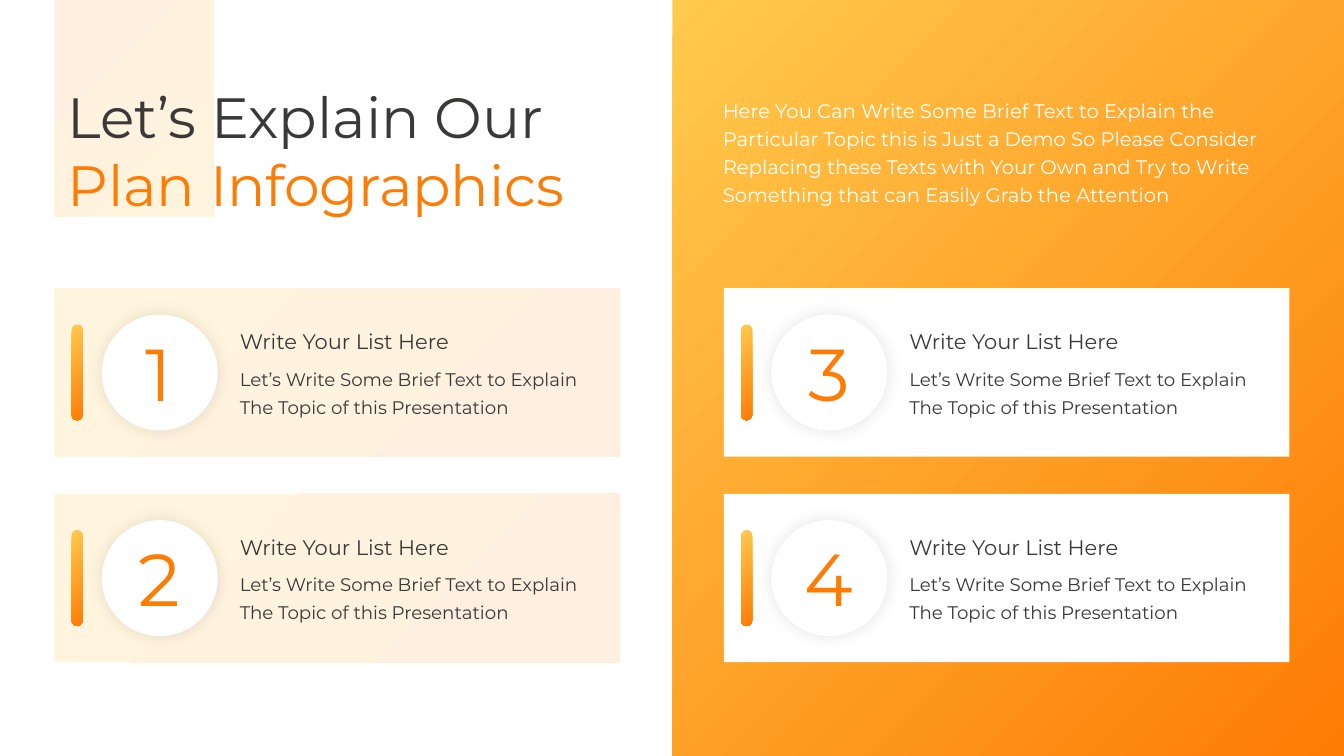
from lxml import etree
from pptx import Presentation
from pptx import util as u
from pptx.dml.color import RGBColor
from pptx.enum import shapes, text
from pptx.oxml import ns

COLORS = {
    "white": "FFFFFF",
    "dark": "3B3838",
    "orange": "FE7C04",
    "yellow": "FFCA4E",
    "peach": "FFEFE1",
    "cream": "FFF4DD",
}


def add_block(parent, kind, left, top, width, height, first, last):
    shape = parent.shapes.add_shape(
        kind, u.Inches(left), u.Inches(top), u.Inches(width), u.Inches(height))
    shape.shadow.inherit = False
    shape.line.fill.background()
    if first == last:
        shape.fill.solid()
        shape.fill.fore_color.rgb = RGBColor.from_string(COLORS[first])
    else:
        shape.fill.gradient()
        shape.fill.gradient_angle = 315
        for stop, color in zip(shape.fill.gradient_stops, (first, last)):
            stop.color.rgb = RGBColor.from_string(COLORS[color])
    return shape


def add_lines(parent, left, top, width, height, lines, size, colors, wrap=False):
    box = parent.shapes.add_textbox(
        u.Inches(left), u.Inches(top), u.Inches(width), u.Inches(height))
    frame = box.text_frame
    frame.text = "\n".join(lines)
    frame.word_wrap = wrap
    frame.auto_size = text.MSO_AUTO_SIZE.SHAPE_TO_FIT_TEXT
    for paragraph, color in zip(frame.paragraphs, colors):
        font = paragraph.runs[0].font
        font.name = "Montserrat"
        font.size = u.Pt(size)
        font.color.rgb = RGBColor.from_string(COLORS[color])
    return frame.paragraphs


presentation = Presentation()
presentation.slide_width = u.Inches(13.33)
presentation.slide_height = u.Inches(7.5)
slide = presentation.slides.add_slide(presentation.slide_layouts[6])

RECTANGLE = shapes.MSO_SHAPE.RECTANGLE
add_block(slide, RECTANGLE, 0.54, 0, 1.58, 2.15, "peach", "cream")
add_block(slide, RECTANGLE, 6.67, 0, 6.66, 7.5, "yellow", "orange")

add_lines(slide, 0.57, 0.76, 5.54, 1.46,
          ["Let’s Explain Our", "Plan Infographics"], 40.5, ["dark", "orange"])
introduction = [
    "Here You Can Write Some Brief Text to Explain the",
    "Particular Topic this is Just a Demo So Please Consider",
    "Replacing these Texts with Your Own and Try to Write",
    "Something that can Easily Grab the Attention",
]
for paragraph in add_lines(slide, 7.07, 0.89, 5.62, 1.2, introduction, 14,
                           ["white"] * 4, wrap=True):
    paragraph.line_spacing = u.Pt(20)

columns = [(0.54, "cream", "peach"), (7.18, "white", "white")]
rows = [2.86, 4.9]
number_widths = [0.5, 0.64, 0.65, 0.72]

for index, number_width in enumerate(number_widths):
    left, first, last = columns[index // 2]
    top = rows[index % 2]
    card = slide.shapes.add_group_shape()
    add_block(card, RECTANGLE, left, top, 5.61, 1.67, first, last)

    circle = add_block(card, shapes.MSO_SHAPE.OVAL, left + 0.47, top + 0.26,
                       1.15, 1.15, "white", "white")
    effects = circle._element.spPr.find(ns.qn("a:effectLst"))
    shadow = etree.SubElement(effects, ns.qn("a:outerShdw"),
                              blurRad=str(u.Pt(12)), dist="0", dir="0",
                              algn="ctr", rotWithShape="0")
    shadow_color = etree.SubElement(shadow, ns.qn("a:srgbClr"), val="000000")
    etree.SubElement(shadow_color, ns.qn("a:alpha"), val="10000")

    number = add_lines(card, left + 1.04 - number_width / 2, top + 0.34,
                       number_width, 0.98, [str(index + 1)], 52.5, ["orange"])
    number[0].alignment = text.PP_ALIGN.CENTER

    bar = add_block(card, shapes.MSO_SHAPE.ROUNDED_RECTANGLE, left + 0.17,
                    top + 0.36, 0.11, 0.95, "yellow", "orange")
    bar.adjustments[0] = 0.5

    add_lines(card, left + 1.74, top + 0.35, 2.49, 0.35,
              ["Write Your List Here"], 15, ["dark"])
    details = add_lines(card, left + 1.74, top + 0.74, 3.64, 0.58,
                        ["Let’s Write Some Brief Text to Explain",
                         "The Topic of this Presentation"], 13, ["dark"] * 2)
    details[1].line_spacing = u.Pt(20)

presentation.save("out.pptx")
